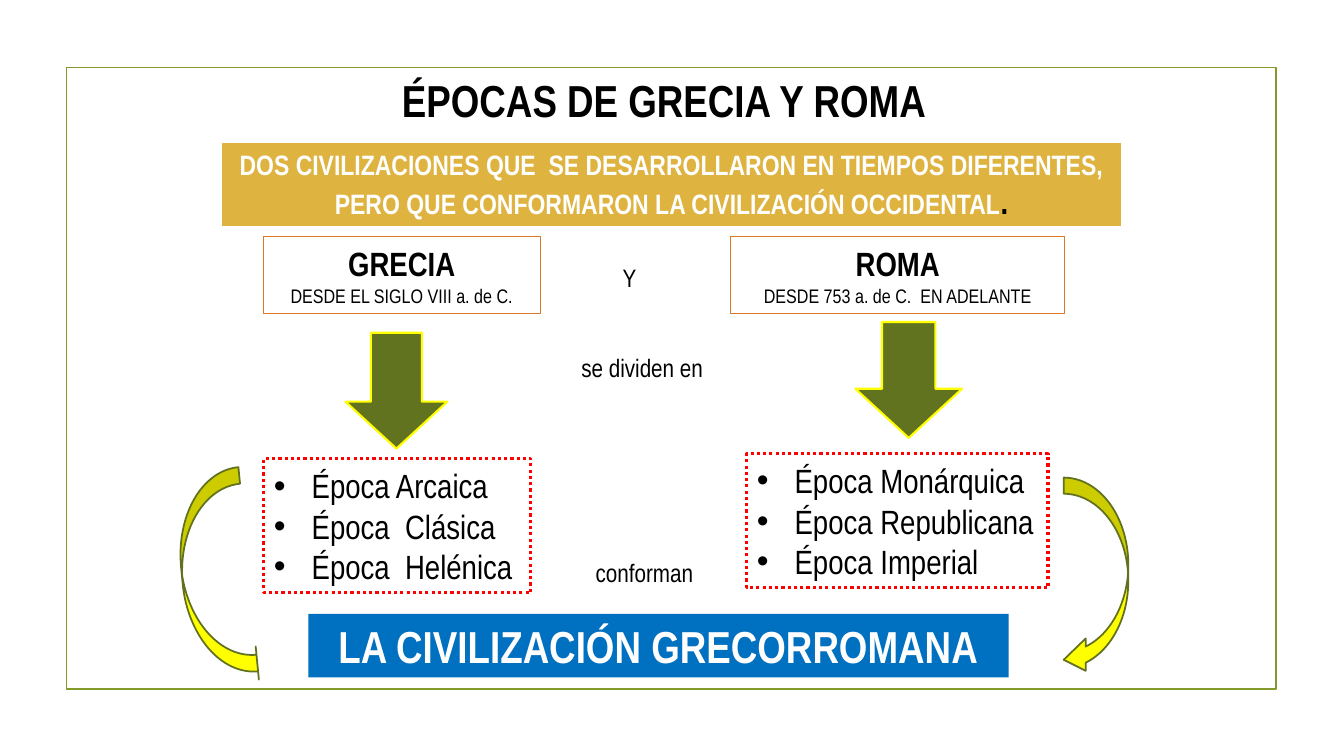
from dataclasses import dataclass
from typing import Optional

from lxml import etree
from pptx import Presentation
from pptx import util as u
from pptx.dml.color import RGBColor
from pptx.enum import dml, shapes, text
from pptx.oxml import ns

FACE = "Arial Narrow"
BLACK = RGBColor(0x00, 0x00, 0x00)
WHITE = RGBColor(0xFF, 0xFF, 0xFF)
OLIVE = RGBColor(0x83, 0x99, 0x2A)
MOSS = RGBColor(0x62, 0x73, 0x1F)
EDGE = RGBColor(0x61, 0x71, 0x1F)
GOLD = RGBColor(0xDE, 0xB3, 0x40)
ORANGE = RGBColor(0xD9, 0x78, 0x28)
RED = RGBColor(0xFF, 0x00, 0x00)
BLUE = RGBColor(0x00, 0x70, 0xC0)
YELLOW = RGBColor(0xFF, 0xFF, 0x00)

FORM = shapes.MSO_SHAPE
MIDDLE = text.MSO_ANCHOR.MIDDLE
CENTER = text.PP_ALIGN.CENTER
LEFT = text.PP_ALIGN.LEFT
INDENT = u.Cm(0.95)


@dataclass
class Box:
    left: float
    top: float
    width: float
    height: float

    def sides(self) -> tuple:
        return tuple(map(u.Cm, (self.left, self.top, self.width, self.height)))


@dataclass
class Line:
    words: str
    size: int
    bold: bool = False
    color: RGBColor = BLACK


@dataclass
class Panel:
    box: Box
    lines: tuple = ()
    fill: Optional[RGBColor] = None
    edge: Optional[RGBColor] = None
    weight: float = 1


@dataclass
class Arrow:
    form: FORM
    box: Box
    turn: float
    bends: tuple
    fill: RGBColor
    edge: RGBColor
    weight: float


@dataclass
class Epochs:
    box: Box
    names: tuple


PANELS = (
    Panel(Box(1.68, 1.7, 30.48, 15.67), edge=OLIVE, weight=1.25),
    Panel(Box(5.56, 3.56, 22.73, 2.18), fill=GOLD, edge=WHITE, weight=2, lines=(
        Line("DOS CIVILIZACIONES QUE  SE DESARROLLARON EN TIEMPOS DIFERENTES, "
             "PERO QUE CONFORMARON LA CIVILIZACIÓN OCCIDENTAL", 20, True, WHITE),)),
    Panel(Box(6.63, 5.97, 6.99, 1.93), edge=ORANGE, weight=0.75, lines=(
        Line("GRECIA", 24, True), Line("DESDE EL SIGLO VIII a. de C.", 14))),
    Panel(Box(18.42, 5.97, 8.41, 1.93), edge=ORANGE, weight=0.75, lines=(
        Line("ROMA", 24, True), Line("DESDE 753 a. de C.  EN ADELANTE", 14))),
    Panel(Box(7.77, 15.47, 17.65, 1.6), fill=BLUE, lines=(
        Line("LA CIVILIZACIÓN GRECORROMANA", 32, True, WHITE),)),
)
LISTS = (
    Epochs(Box(6.65, 11.56, 6.73, 3.38),
           ("Época Arcaica", "Época  Clásica", "Época  Helénica")),
    Epochs(Box(18.82, 11.43, 7.59, 3.38),
           ("Época Monárquica", "Época Republicana", "Época Imperial")),
)
ARROWS = (
    Arrow(FORM.RIGHT_ARROW, Box(21.44, 8.23, 2.92, 2.69), 90, (0.5, 0.46), MOSS, YELLOW, 1.5),
    Arrow(FORM.RIGHT_ARROW, Box(8.53, 8.56, 2.92, 2.57), 90, (0.5, 0.46), MOSS, YELLOW, 1.5),
    Arrow(FORM.CURVED_DOWN_ARROW, Box(25.12, 13.72, 5, 1.63), 90, (0.25, 0.5, 0.34),
          YELLOW, EDGE, 1.25),
    Arrow(FORM.CURVED_UP_ARROW, Box(2.74, 13.69, 5.38, 1.68), 84.5, (0.25, 0.5, 0),
          YELLOW, EDGE, 1.25),
)
LABELS = (
    ("Y", Box(15.44, 6.48, 1.6, 1.02)),
    ("se dividen en", Box(14.4, 8.76, 4.39, 1.02)),
    ("conforman", Box(14.76, 13.92, 3.99, 1.02)),
)


def style(font, line: Line) -> None:
    font.name = FACE
    font.size = u.Pt(line.size)
    font.bold = line.bold
    font.color.rgb = line.color


def write(frame, lines: tuple, align=CENTER, anchor=MIDDLE) -> None:
    frame.word_wrap = True
    frame.auto_size = text.MSO_AUTO_SIZE.NONE
    frame.vertical_anchor = anchor
    for spot, line in enumerate(lines):
        para = frame.add_paragraph() if spot else frame.paragraphs[0]
        para.text = line.words
        para.alignment = align
        para.space_before = u.Pt(0)
        style(para.font, line)


def place(shape, box: Box) -> None:
    shape.left, shape.top, shape.width, shape.height = box.sides()


def paint(shape, fill: Optional[RGBColor], edge: Optional[RGBColor], weight: float) -> None:
    shape.shadow.inherit = False
    if fill is None:
        shape.fill.background()
    else:
        shape.fill.solid()
        shape.fill.fore_color.rgb = fill
    if edge is None:
        shape.line.fill.background()
    else:
        shape.line.color.rgb = edge
        shape.line.width = u.Pt(weight)


def draw_panel(slide, panel: Panel):
    shape = slide.shapes.add_shape(FORM.RECTANGLE, *panel.box.sides())
    paint(shape, panel.fill, panel.edge, panel.weight)
    write(shape.text_frame, panel.lines)
    return shape


def draw_arrow(slide, arrow: Arrow) -> None:
    shape = slide.shapes.add_shape(arrow.form, *arrow.box.sides())
    shape.rotation = arrow.turn
    for spot, bend in enumerate(arrow.bends):
        shape.adjustments[spot] = bend
    paint(shape, arrow.fill, arrow.edge, arrow.weight)


def draw_list(body, epochs: Epochs) -> None:
    place(body, epochs.box)
    body.fill.background()
    body.line.color.rgb = RED
    body.line.width = u.Pt(2.25)
    body.line.dash_style = dml.MSO_LINE.ROUND_DOT
    write(body.text_frame, tuple(Line(name, 24) for name in epochs.names), LEFT)
    for para in body.text_frame.paragraphs:
        props = para._p.get_or_add_pPr()
        props.set("marL", str(INDENT))
        props.set("indent", str(-INDENT))
        mark = etree.Element(ns.qn("a:buChar"), char="•")
        props.find(ns.qn("a:defRPr")).addprevious(mark)


def main() -> None:
    deck = Presentation()
    deck.slide_width, deck.slide_height = u.Cm(33.87), u.Cm(19.05)
    slide = deck.slides.add_slide(deck.slide_layouts[3])
    title, *bodies = slide.placeholders
    place(title, Box(8.94, 1.7, 15.6, 1.6))
    write(title.text_frame, (Line("ÉPOCAS DE GRECIA Y ROMA", 32, True),))
    for body, epochs in zip(bodies, LISTS):
        draw_list(body, epochs)

    border, banner, *rest = [draw_panel(slide, panel) for panel in PANELS]
    para = banner.text_frame.paragraphs[0]
    para.add_run().text = "."
    style(para.runs[-1].font, Line(".", 24, True))

    for arrow in ARROWS:
        draw_arrow(slide, arrow)
    for words, box in LABELS:
        label = slide.shapes.add_textbox(*box.sides())
        write(label.text_frame, (Line(words, 18),), LEFT, text.MSO_ANCHOR.TOP)
    deck.save("out.pptx")


if __name__ == "__main__":
    main()
